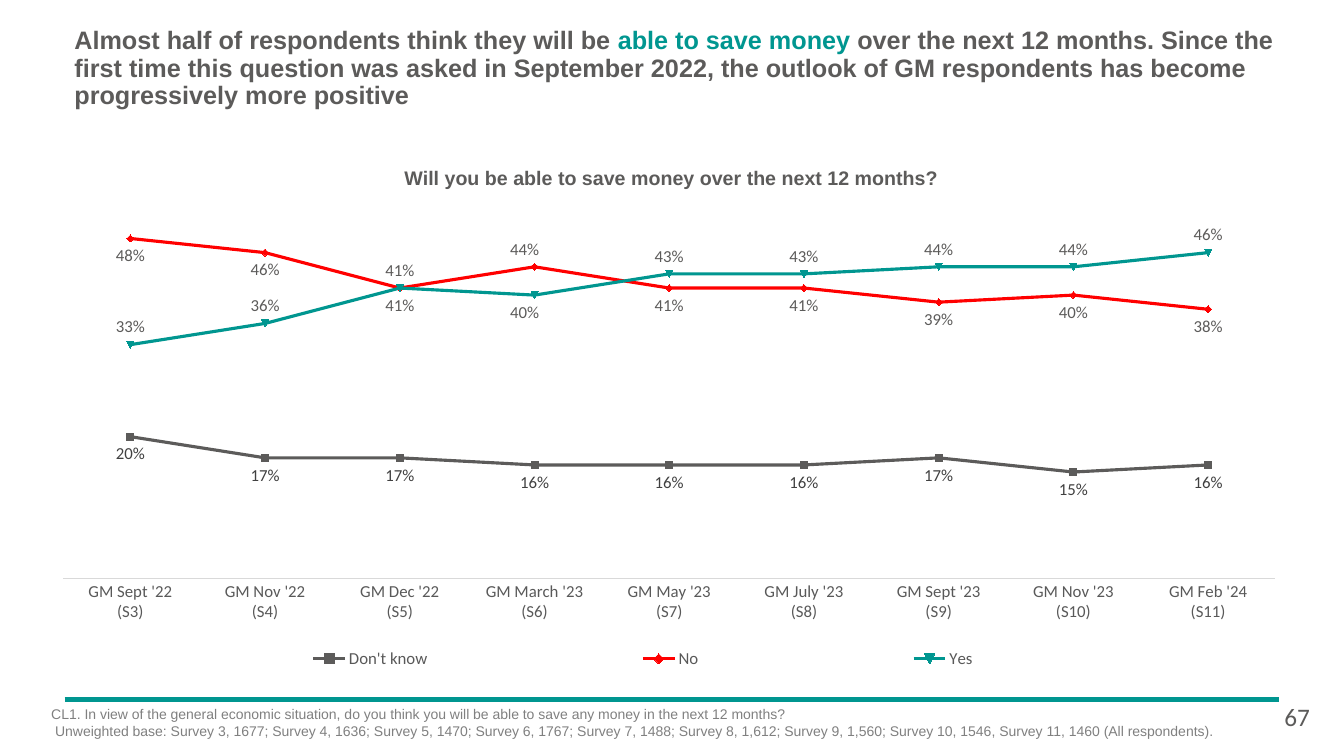
from lxml import etree
from pptx import Presentation
from pptx.chart.data import CategoryChartData
from pptx.dml.color import RGBColor
from pptx.enum.chart import XL_CHART_TYPE as CT, XL_LABEL_POSITION as LP
from pptx.enum.chart import XL_LEGEND_POSITION as LEG, XL_TICK_MARK as TM
from pptx.enum.shapes import MSO_CONNECTOR
from pptx.enum.text import MSO_ANCHOR, PP_ALIGN
from pptx.oxml import parse_xml
from pptx.oxml.ns import nsdecls, qn
from pptx.util import Inches, Pt

GREY, TEAL, RED = "5C5B5A", "009690", "FF0000"


def rgb(value):
    return RGBColor.from_string(value)


def manual_layout(**parts):
    tags = "".join(f'<c:{k} val="{v}"/>' for k, v in parts.items())
    return parse_xml(f"<c:layout {nsdecls('c')}><c:manualLayout>{tags}"
                     "</c:manualLayout></c:layout>")


class Deck:
    """Hold the style and the current slide, and add elements to it."""

    def __init__(self):
        self.prs = Presentation()
        self.prs.slide_width, self.prs.slide_height = Inches(13.33), Inches(7.5)
        self.s = self.prs.slides.add_slide(self.prs.slide_layouts[6])

    def font(self, font, size, color, name="Arial", bold=False):
        font.size, font.name, font.bold = Pt(size), name, bold
        font.color.rgb = rgb(color)

    def text(self, box, paragraphs, size, name="Arial", bold=False, align=None,
             anchor=MSO_ANCHOR.TOP, spacing=None, inset=None):
        tf = self.s.shapes.add_textbox(*map(Inches, box)).text_frame
        tf.word_wrap, tf.vertical_anchor = True, anchor
        if inset is not None:
            tf.margin_left = tf.margin_right = Inches(inset)
            tf.margin_top = tf.margin_bottom = Inches(inset)
        for i, runs in enumerate(paragraphs):
            p = tf.add_paragraph() if i else tf.paragraphs[0]
            p.alignment, p.line_spacing = align, spacing
            for words, color in runs:
                r = p.add_run()
                r.text = words
                self.font(r.font, size, color, name, bold)

    def line(self, x1, y1, x2, y2, color, width):
        ends = map(Inches, (x1, y1, x2, y2))
        c = self.s.shapes.add_connector(MSO_CONNECTOR.STRAIGHT, *ends)
        c.line.color.rgb, c.line.width = rgb(color), Pt(width)
        etree.SubElement(c.element.spPr, qn("a:effectLst"))

    def line_chart(self, box, cats, series):
        data = CategoryChartData(number_format="0%")
        data.categories = cats
        for name, percents, *_ in series:
            data.add_series(name, [v / 100 for v in percents])
        chart = self.s.shapes.add_chart(
            CT.LINE, *map(Inches, box), data).chart
        self.font(chart.font, 10, "000000", "Calibri")
        chart.has_title = False
        self.axes(chart)
        self.legend(chart)
        plot = chart.plots[0]
        plot.vary_by_categories = False
        for ser, (_, _, color, label_color, pos, moved) in zip(plot.series, series):
            self.series(ser, color, label_color, pos, moved)

    def axes(self, chart):
        val, cat = chart.value_axis, chart.category_axis
        val.minimum_scale, val.maximum_scale = 0, 0.5
        val.has_major_gridlines = val.visible = False
        cat.major_tick_mark = cat.minor_tick_mark = TM.NONE
        cat.format.line.color.rgb, cat.format.line.width = rgb("D9D9D9"), Pt(0.75)
        self.font(cat.tick_labels.font, 12, "595959", "Calibri")
        area = chart.plots[0]._element.getparent()
        for old in area.findall(qn("c:layout")):
            area.remove(old)
        area.insert(0, manual_layout(
            layoutTarget="inner", xMode="edge", yMode="edge",
            x=0.007, y=0.026, w=0.989, h=0.724))

    def legend(self, chart):
        chart.has_legend = True
        legend = chart.legend
        legend.position, legend.include_in_layout = LEG.LEFT, False
        self.font(legend.font, 12, "595959", "Calibri")
        el = legend._element
        for old in el.findall(qn("c:layout")):
            el.remove(old)
        el.find(qn("c:legendPos")).addnext(manual_layout(
            xMode="edge", yMode="edge", x=0.04, y=0.87, w=0.88, h=0.09))

    def series(self, ser, color, label_color, pos, moved):
        ser.smooth = False
        ser.marker.style = None
        ser.format.line.color.rgb, ser.format.line.width = rgb(color), Pt(2.25)
        labels = ser.data_labels
        labels.show_value, labels.position = True, pos
        labels.number_format, labels.number_format_is_linked = "0%", False
        self.font(labels.font, 12, label_color, "Calibri")
        for idx, point_pos in moved.items():
            label = ser.points[idx].data_label
            self.font(label.font, 12, label_color, "Calibri")
            label.position = point_pos
            for tag in labels._element.findall(qn("c:dLbl")):
                tag.find(qn("c:idx")).addnext(manual_layout(x=-0.008, y=0))


def main():
    deck = Deck()
    deck.line(0.64, 6.94, 12.69, 6.94, TEAL, 3)
    deck.text((0.64, 0.25, 12.16, 0.87), [[
        ("Almost half of respondents think they will be ", GREY),
        ("able to save money ", TEAL),
        ("over the next 12 months. Since the first time this question was asked "
         "in September 2022, the outlook of GM respondents has become "
         "progressively more positive", GREY),
    ]], 18, bold=True, anchor=MSO_ANCHOR.MIDDLE, spacing=0.9)
    deck.text((1.82, 1.65, 9.68, 0.24), [[
        ("Will you be able to save money over the next 12 months?", GREY),
    ]], 14, bold=True, align=PP_ALIGN.CENTER, inset=0)

    months = ["Sept '22", "Nov '22", "Dec '22", "March '23", "May '23",
              "July '23", "Sept '23", "Nov '23", "Feb '24"]
    cats = [f"GM {month}\n(S{n})" for n, month in enumerate(months, 3)]
    deck.line_chart((0.54, 2.1, 12.16, 4.85), cats, [
        ("Don't know", [20, 17, 17, 16, 16, 16, 17, 15, 16],
         GREY, "404040", LP.BELOW, {}),
        ("No", [48, 46, 41, 44, 41, 41, 39, 40, 38],
         RED, GREY, LP.BELOW, {3: LP.ABOVE}),
        ("Yes", [33, 36, 41, 40, 43, 43, 44, 44, 46],
         TEAL, GREY, LP.ABOVE, {3: LP.BELOW}),
    ])

    notes = [
        "CL1. In view of the general economic situation, do you think you will "
        "be able to save any money in the next 12 months?",
        " Unweighted base: Survey 3, 1677; Survey 4, 1636; Survey 5, 1470; "
        "Survey 6, 1767; Survey 7, 1488; Survey 8, 1,612; Survey 9, 1,560; "
        "Survey 10, 1546, Survey 11, 1460 (All respondents).",
    ]
    deck.text((0.41, 6.95, 11.98, 0.56), [[(n, "808080")] for n in notes], 10)
    deck.text((12.64, 6.91, 0.53, 0.4), [[("67", GREY)]], 18, name="Calibri")
    deck.prs.save("out.pptx")


if __name__ == "__main__":
    main()
